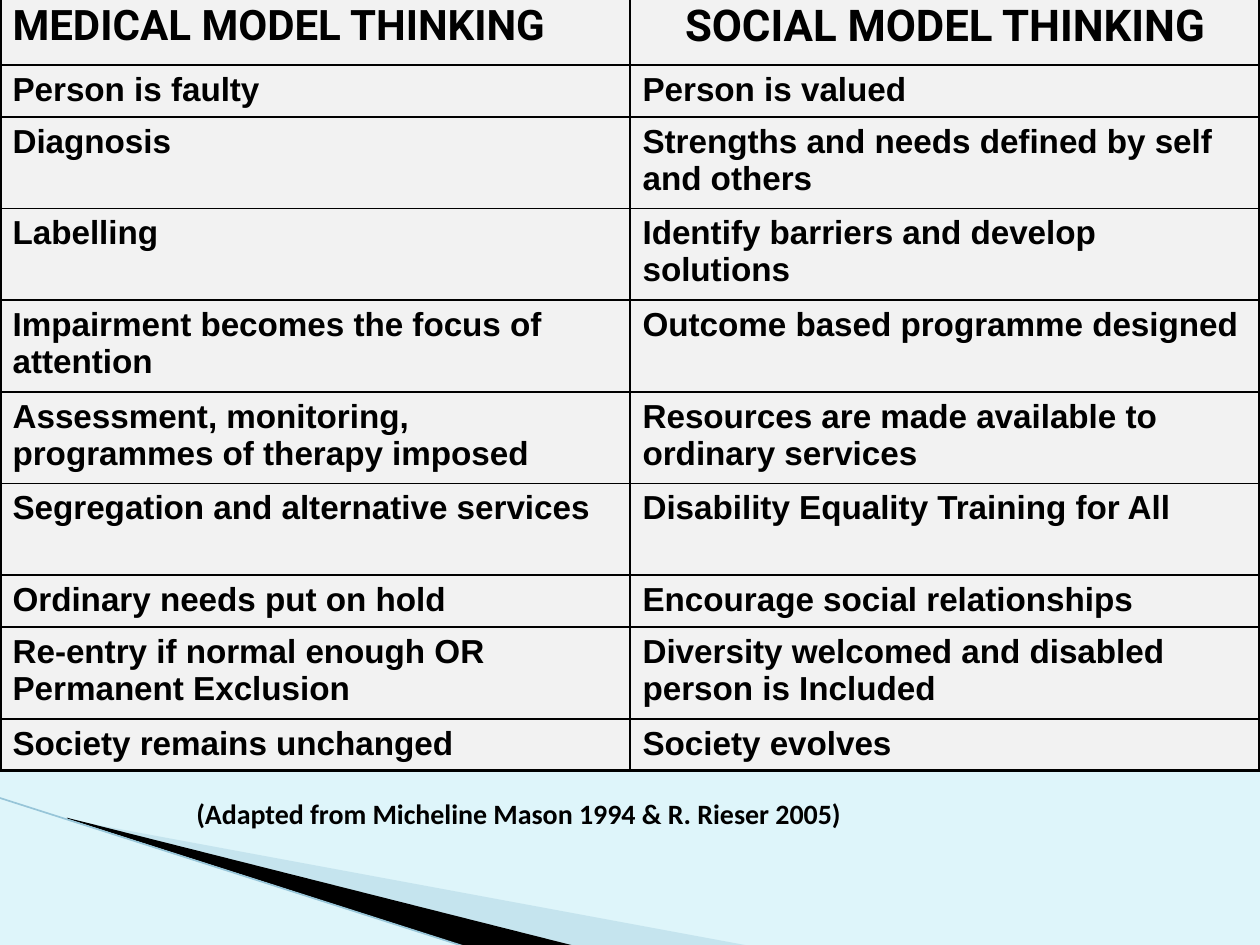
from lxml import etree
from pptx import Presentation
from pptx.dml.color import RGBColor
from pptx.enum.shapes import MSO_CONNECTOR
from pptx.enum.text import MSO_AUTO_SIZE, PP_ALIGN
from pptx.oxml.ns import qn
from pptx.util import Pt

STRAIGHT = MSO_CONNECTOR.STRAIGHT
FIT_SHAPE = MSO_AUTO_SIZE.SHAPE_TO_FIT_TEXT
LEFT, CENTER = PP_ALIGN.LEFT, PP_ALIGN.CENTER

COLORS = {
    "background": "DEF5FA",
    "cell": "F2F2F2",
    "ink": "000000",
    "pale_wedge": "A0CBDC",
    "edge": "97C5D8",
}
HEADER_HEIGHT, SINGLE_HEIGHT, DOUBLE_HEIGHT = 40, 29.7, 52.4
THIN, THICK = 1, 2.25

ROWS = [
    ("MEDICAL MODEL THINKING", "SOCIAL MODEL THINKING", HEADER_HEIGHT),
    ("Person is faulty", "Person is valued", SINGLE_HEIGHT),
    ("Diagnosis", "Strengths and needs defined by self and others", DOUBLE_HEIGHT),
    ("Labelling", "Identify barriers and develop solutions", DOUBLE_HEIGHT),
    ("Impairment becomes the focus of attention", "Outcome based programme designed", DOUBLE_HEIGHT),
    ("Assessment, monitoring, programmes of therapy imposed",
     "Resources are made available to ordinary services", DOUBLE_HEIGHT),
    ("Segregation and alternative services", "Disability Equality Training for All", DOUBLE_HEIGHT),
    ("Ordinary needs put on hold", "Encourage social relationships", SINGLE_HEIGHT),
    ("Re-entry if normal enough OR Permanent Exclusion",
     "Diversity welcomed and disabled person is Included", DOUBLE_HEIGHT),
    ("Society remains unchanged", "Society evolves", SINGLE_HEIGHT),
]
WEDGES = [
    ("pale_wedge", 40, [(39.6, 468.5), (428.4, 540.5), (328.3, 540.5), (39.6, 468)]),
    ("ink", 100, [(38.2, 467.3), (329, 540.7), (267.8, 541.4), (38.9, 468)]),
]


def style_text(paragraph, size, font_name):
    font = paragraph.runs[0].font
    font.size = Pt(size)
    font.name = font_name
    font.bold = True
    font.color.rgb = RGBColor.from_string(COLORS["ink"])


def add_borders(cell, widths):
    properties = cell._tc.get_or_add_tcPr()
    for position, (tag, width) in enumerate(widths.items()):
        border = etree.Element(qn(f"a:{tag}"), w=str(Pt(width)))
        fill = etree.SubElement(border, qn("a:solidFill"))
        etree.SubElement(fill, qn("a:srgbClr"), val=COLORS["ink"])
        properties.insert(position, border)


presentation = Presentation()
presentation.slide_width = Pt(720)
presentation.slide_height = Pt(540)
slide = presentation.slides.add_slide(presentation.slide_layouts[6])
slide.background.fill.solid()
slide.background.fill.fore_color.rgb = RGBColor.from_string(COLORS["background"])

for color, opacity, points in WEDGES:
    corners = [(Pt(x), Pt(y)) for x, y in points]
    builder = slide.shapes.build_freeform(*corners[0])
    builder.add_line_segments(corners[1:], close=True)
    wedge = builder.convert_to_shape()
    wedge.shadow.inherit = False
    wedge.fill.solid()
    wedge.fill.fore_color.rgb = RGBColor.from_string(COLORS[color])
    wedge.line.fill.background()
    if opacity < 100:
        color_element = wedge._element.spPr.find(".//" + qn("a:srgbClr"))
        etree.SubElement(color_element, qn("a:alpha"), val=str(opacity * 1000))

edge = slide.shapes.add_connector(STRAIGHT, Pt(-0.7), Pt(455.8), Pt(267.1), Pt(541.4))
edge.line.color.rgb = RGBColor.from_string(COLORS["edge"])
edge.line.width = Pt(0.95)
etree.SubElement(edge._element.spPr, qn("a:effectLst"))

table_height = sum(row[-1] for row in ROWS)
table = slide.shapes.add_table(len(ROWS), 2, Pt(0), Pt(-2.9), Pt(720), Pt(table_height)).table
last_row = len(ROWS) - 1
for row_index, (medical, social, height) in enumerate(ROWS):
    table.rows[row_index].height = Pt(height)
    for column_index, text in enumerate((medical, social)):
        cell = table.cell(row_index, column_index)
        cell.fill.solid()
        cell.fill.fore_color.rgb = RGBColor.from_string(COLORS["cell"])
        cell.text_frame.text = text
        paragraph = cell.text_frame.paragraphs[0]
        if row_index == 0:
            paragraph.alignment = (LEFT, CENTER)[column_index]
            style_text(paragraph, 24 + column_index, "Roboto")
        else:
            style_text(paragraph, 19, "Arial")
        add_borders(cell, {
            "lnL": THICK if column_index == 0 else THIN,
            "lnR": THICK if column_index == 1 else THIN,
            "lnT": THICK if row_index == 0 else THIN,
            "lnB": THICK if row_index == last_row else THIN,
        })

credit = slide.shapes.add_textbox(Pt(105.1), Pt(451.4), Pt(731.5), Pt(26.6))
credit.text_frame.word_wrap = True
credit.text_frame.auto_size = FIT_SHAPE
credit.text_frame.text = "(Adapted from Micheline Mason 1994 & R. Rieser 2005)"
style_text(credit.text_frame.paragraphs[0], 16, "Calibri")

presentation.save("out.pptx")
